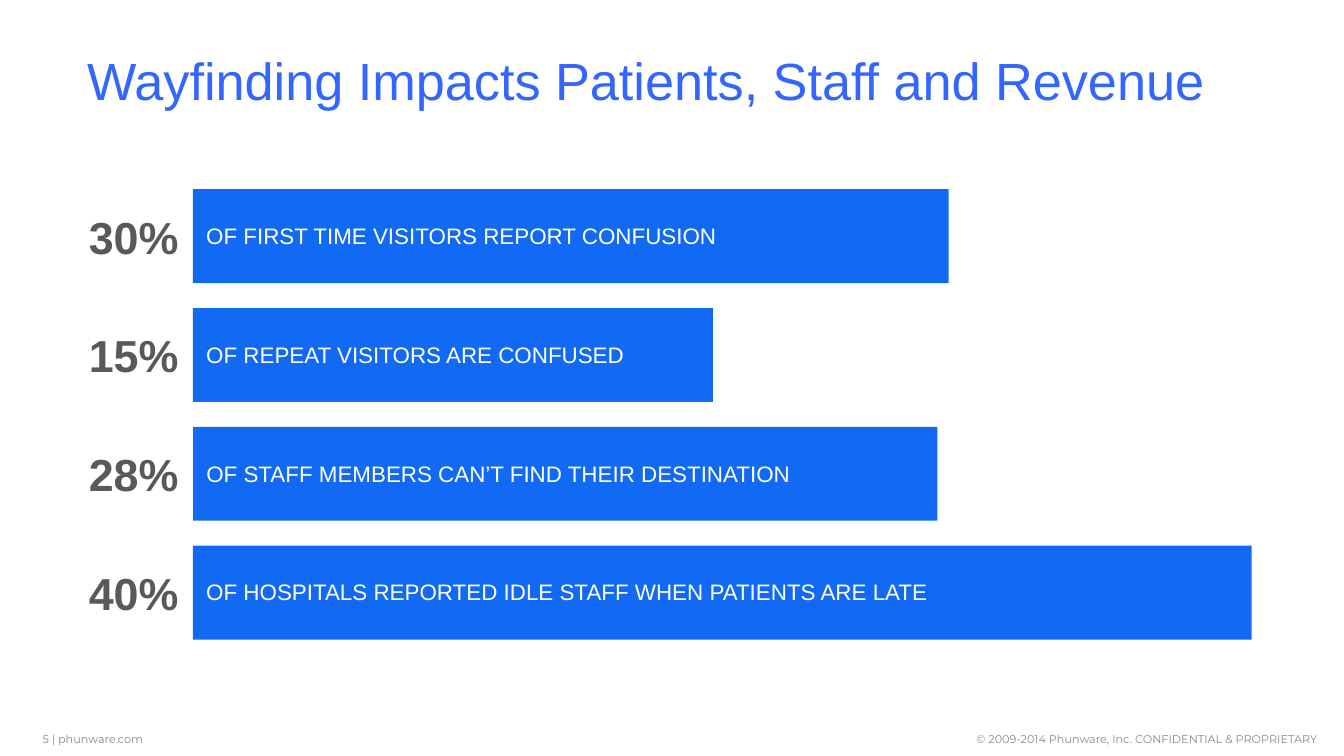
from dataclasses import dataclass
from pptx import Presentation
from pptx.dml.color import RGBColor as Rgb
from pptx.enum.shapes import MSO_SHAPE as Shape
from pptx.enum.text import MSO_ANCHOR as Anchor, PP_ALIGN as Align
from pptx.util import Pt


@dataclass(frozen=True)
class Theme:
    blue: str = "3366FF"
    bar: str = "1269F4"
    white: str = "FFFFFF"
    dark: str = "595959"
    gray: str = "898989"
    font: str = "Arial"
    small: str = "Montserrat"
    title: float = 28
    value: float = 24
    body: float = 12
    foot: float = 6


THEME = Theme()
ROWS = [
    ("30%", "OF FIRST TIME VISITORS REPORT CONFUSION", 404.9),
    ("15%", "OF REPEAT VISITORS ARE CONFUSED", 278.6),
    ("28%", "OF STAFF MEMBERS CAN’T FIND THEIR DESTINATION", 398.8),
    ("40%", "OF HOSPITALS REPORTED IDLE STAFF WHEN PATIENTS ARE LATE", 567.2),
]


def write(shape, text, size, color, font=THEME.font, bold=False,
          align=Align.LEFT, anchor=Anchor.TOP, wrap=True):
    frame = shape.text_frame
    frame.word_wrap = wrap
    frame.vertical_anchor = anchor
    para = frame.paragraphs[0]
    para.alignment = align
    run = para.add_run()
    run.text = text
    run.font.name = font
    run.font.size = Pt(size)
    run.font.bold = bold
    run.font.color.rgb = Rgb.from_string(color)
    return frame


def add_text(slide, box, *args, **opts):
    shape = slide.shapes.add_textbox(*map(Pt, box))
    return write(shape, *args, **opts)


def add_title(slide, box):
    add_text(slide, box, "Wayfinding Impacts Patients, Staff and Revenue",
             THEME.title, THEME.blue)


def add_row(slide, box, value, label):
    left, top, width, height = box
    # Coloured bar with its label
    bar = slide.shapes.add_shape(Shape.RECTANGLE, *map(Pt, box))
    bar.shadow.inherit = False
    bar.fill.solid()
    bar.fill.fore_color.rgb = Rgb.from_string(THEME.bar)
    bar.line.fill.background()
    frame = write(bar, label, THEME.body, THEME.white, anchor=Anchor.MIDDLE)
    frame.margin_bottom = Pt(7.2)
    frame.paragraphs[0].line_spacing = 1.2
    # Percentage to the left of the bar
    add_text(slide, (left - 72.7, top + 15, 72, height - 30), value,
             THEME.value, THEME.dark, bold=True, align=Align.RIGHT,
             anchor=Anchor.MIDDLE)


def add_bars(slide, box):
    left, top, width, height = box
    tall = 50.3
    step = (height - tall) / (len(ROWS) - 1)
    for i, (value, label, wide) in enumerate(ROWS):
        add_row(slide, (left, top + i * step, wide, tall), value, label)


def add_footer(slide, box):
    left, top, width, height = box
    style = dict(font=THEME.small, wrap=False)
    add_text(slide, (left, top, 72, height), "5 | phunware.com",
             THEME.foot, THEME.gray, **style)
    add_text(slide, (left + width - 202.3, top, 202.3, height),
             "© 2009-2014 Phunware, Inc. CONFIDENTIAL & PROPRIETARY",
             THEME.foot, THEME.gray, align=Align.RIGHT, **style)


def main():
    deck = Presentation()
    deck.slide_width, deck.slide_height = Pt(720), Pt(405)
    slide = deck.slides.add_slide(deck.slide_layouts[6])
    add_footer(slide, (15.8, 388.8, 696.8, 14.4))
    add_title(slide, (39.6, 22.3, 624.2, 42.5))
    add_bars(slide, (103.4, 101.4, 567.2, 241.3))
    deck.save("out.pptx")


if __name__ == "__main__":
    main()
